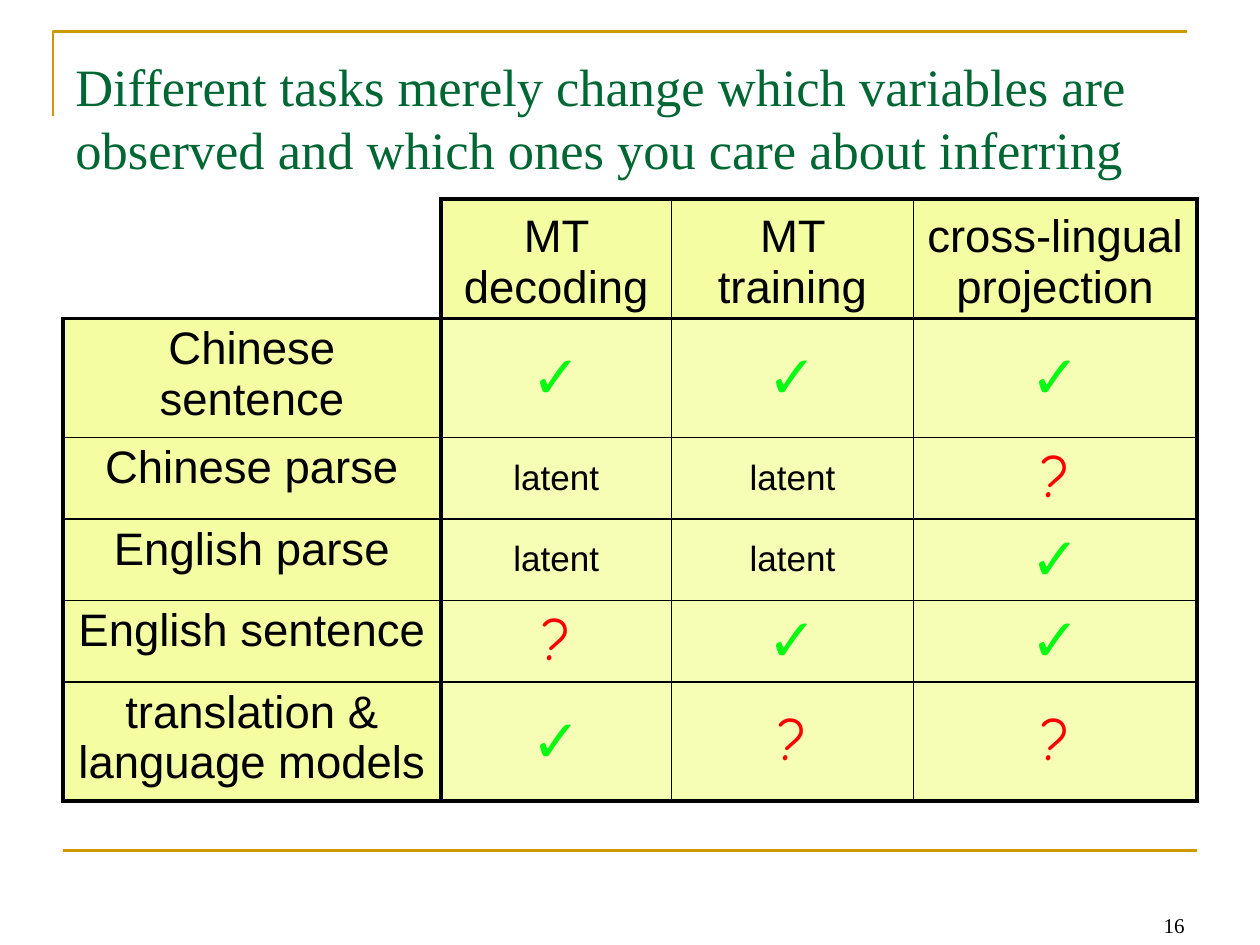
from lxml.etree import SubElement
from pptx import Presentation
from pptx.dml.color import RGBColor
from pptx.enum.shapes import MSO_CONNECTOR
from pptx.enum.text import MSO_ANCHOR, PP_ALIGN
from pptx.oxml.ns import qn
from pptx.util import Inches, Pt

GOLD, GREEN, BLACK = "CC9900", "006633", "000000"
SERIF, SANS, COMIC = "Times New Roman", "Arial", "Comic Neue"
HEAD_FILL, BODY_FILL = "F4FDA1", "F6FDB5"
THICK, THIN = 2.25, 1

# Cell text style by content: size, font, colour
LABEL = (26, SANS, BLACK)
MARKS = {
    "✓": (34, SANS, "05FB11"),
    "?": (34, COMIC, "FF0000"),
    "latent": (20, SANS, BLACK),
}

COL_WIDTHS = [3, 1.83, 1.92, 2.25]
ROW_HEIGHTS = [0.91, 0.91, 0.64, 0.64, 0.64, 0.91]
ROWS = [
    ["", "MT decoding", "MT training", "cross-lingual projection"],
    ["Chinese sentence", "✓", "✓", "✓"],
    ["Chinese parse", "latent", "latent", "?"],
    ["English parse", "latent", "latent", "✓"],
    ["English sentence", "?", "✓", "✓"],
    ["translation & language models", "✓", "?", "?"],
]


def rgb(color):
    return RGBColor.from_string(color)


def write(tf, text, size, font, color, align):
    p = tf.paragraphs[0]
    p.alignment = align
    r = p.add_run()
    r.text = text
    r.font.size = Pt(size)
    r.font.name = font
    r.font.color.rgb = rgb(color)


def add_text(s, box, text, size, color, align, anchor):
    tf = s.shapes.add_textbox(*(Inches(v) for v in box)).text_frame
    tf.word_wrap = True
    tf.vertical_anchor = anchor
    write(tf, text, size, SERIF, color, align)


def gold_line(sp):
    sp.line.color.rgb = rgb(GOLD)
    sp.line.width = Pt(1.5)


def add_corner(s, left, top, width, height):
    """Open corner above and left of the title."""
    fb = s.shapes.build_freeform(Inches(left), Inches(top + height))
    fb.add_line_segments([(Inches(left), Inches(top)),
                          (Inches(left + width), Inches(top))], close=False)
    sp = fb.convert_to_shape()
    sp.shadow.inherit = False
    sp.fill.background()
    gold_line(sp)


def add_rule(s, left, top, width):
    """Horizontal rule above the footer."""
    line = s.shapes.add_connector(MSO_CONNECTOR.STRAIGHT, Inches(left), Inches(top),
                                  Inches(left + width), Inches(top))
    gold_line(line)
    SubElement(line._element.spPr, qn("a:effectLst"))


def set_borders(cell, widths):
    """Border widths in points, in the order left, right, top, bottom; 0 is none."""
    tcPr = cell._tc.get_or_add_tcPr()
    for tag, width in zip(("a:lnL", "a:lnR", "a:lnT", "a:lnB"), widths):
        ln = SubElement(tcPr, qn(tag), w=str(Pt(width)))
        if width:
            fill = SubElement(ln, qn("a:solidFill"))
            SubElement(fill, qn("a:srgbClr"), val=BLACK)
        else:
            SubElement(ln, qn("a:noFill"))


def edge(i, last):
    """Thick on the outside and after the header, thin elsewhere."""
    return THICK if i in (0, 1, last) else THIN


def add_task_table(s, left, top):
    n_rows, n_cols = len(ROWS), len(COL_WIDTHS)
    table = s.shapes.add_table(n_rows, n_cols, Inches(left), Inches(top),
                               Inches(sum(COL_WIDTHS)), Inches(sum(ROW_HEIGHTS))).table
    table.first_row = table.horz_banding = False
    for col, width in zip(table.columns, COL_WIDTHS):
        col.width = Inches(width)
    for row, height in zip(table.rows, ROW_HEIGHTS):
        row.height = Inches(height)

    for i, texts in enumerate(ROWS):
        for j, text in enumerate(texts):
            cell = table.cell(i, j)
            cell.margin_top = cell.margin_bottom = Inches(0.04)
            widths = [edge(j, n_cols), edge(j + 1, n_cols),
                      edge(i, n_rows), edge(i + 1, n_rows)]
            if not text:  # empty corner keeps only its inner sides
                widths[0] = widths[2] = 0
            set_borders(cell, widths)
            cell.fill.solid()
            if not text:
                cell.fill.fore_color.rgb = rgb("FFFFFF")
                continue
            cell.fill.fore_color.rgb = rgb(BODY_FILL if i and j else HEAD_FILL)
            if i == 0:
                cell.vertical_anchor = MSO_ANCHOR.BOTTOM
            else:
                cell.vertical_anchor = MSO_ANCHOR.MIDDLE if j else MSO_ANCHOR.TOP
            write(cell.text_frame, text, *MARKS.get(text, LABEL), PP_ALIGN.CENTER)


def main():
    prs = Presentation()
    prs.slide_width, prs.slide_height = Inches(10), Inches(7.5)
    s = prs.slides.add_slide(prs.slide_layouts[6])

    # Frame lines and page number
    add_corner(s, 0.42, 0.25, 9, 0.67)
    add_rule(s, 0.5, 6.75, 9)
    add_text(s, (8.75, 6.99, 0.75, 0.5), "16", 12, BLACK,
             PP_ALIGN.RIGHT, MSO_ANCHOR.BOTTOM)

    # Title
    add_text(s, (0.5, 0.3, 9, 1.25),
             "Different tasks merely change which variables are observed "
             "and which ones you care about inferring",
             30, GREEN, PP_ALIGN.LEFT, MSO_ANCHOR.MIDDLE)

    add_task_table(s, 0.5, 1.58)
    prs.save("out.pptx")


if __name__ == "__main__":
    main()
